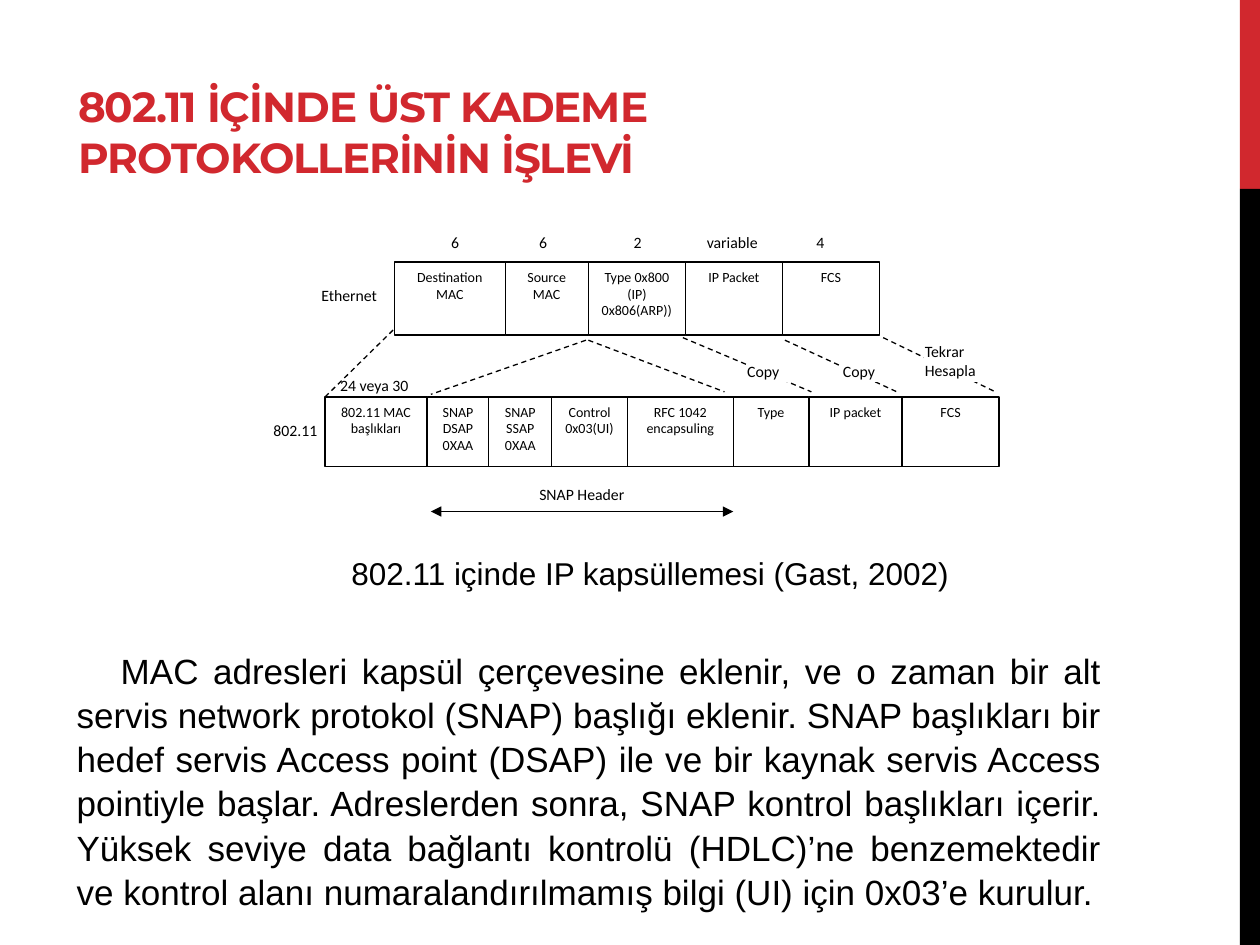
from itertools import pairwise

from lxml import etree
from pptx import Presentation
from pptx.dml.color import RGBColor
from pptx.enum import dml, shapes, text
from pptx.oxml import ns
from pptx.util import Inches, Pt

RED, BLACK, WHITE = "D1282E", "000000", "FFFFFF"

ETHERNET_FIELDS = ["Destination MAC", "Source MAC", "Type 0x800 (IP) 0x806(ARP))", "IP Packet", "FCS"]
ETHERNET_EDGES = [3.13, 4.01, 4.67, 5.44, 6.21, 6.98]
WIFI_FIELDS = ["802.11 MAC başlıkları", "SNAP DSAP 0XAA", "SNAP SSAP 0XAA", "Control 0x03(UI)",
               "RFC 1042 encapsuling", "Type", "IP packet", "FCS"]
WIFI_EDGES = [2.58, 3.39, 3.88, 4.38, 4.98, 5.82, 6.42, 7.16, 7.93]
FIELD_SIZES = [("6", 3.58, 0.1), ("6", 4.28, 0.1), ("2", 5.03, 0.1), ("variable", 5.61, 0.47), ("4", 6.48, 0.1)]
MAPPINGS = [
    (3.12, 2.62, 2.58, 3.15),
    (4.65, 2.7, 3.42, 3.13),
    (4.67, 2.7, 5.75, 3.11),
    (5.42, 2.68, 6.44, 3.11),
    (6.23, 2.7, 7.14, 3.12),
    (7.01, 2.68, 7.9, 3.11),
]
EXPLANATION = (
    "MAC adresleri kapsül çerçevesine eklenir, ve o zaman bir alt servis network protokol (SNAP) "
    "başlığı eklenir. SNAP başlıkları bir hedef servis Access point (DSAP) ile ve bir kaynak servis "
    "Access pointiyle başlar. Adreslerden sonra, SNAP kontrol başlıkları içerir. Yüksek seviye data "
    "bağlantı kontrolü (HDLC)’ne benzemektedir ve kontrol alanı numaralandırılmamış bilgi (UI) için "
    "0x03’e kurulur."
)


def color(value):
    return RGBColor.from_string(value)


def write(frame, words, size, font, ink=BLACK, align=text.PP_ALIGN.LEFT):
    frame.word_wrap = True
    paragraph = frame.paragraphs[0]
    paragraph.alignment = align
    run = paragraph.add_run()
    run.text = words
    run.font.size = Pt(size)
    run.font.name = font
    run.font.color.rgb = color(ink)
    return paragraph


def add_rect(slide, left, top, width, height, fill, outline=None):
    rect = slide.shapes.add_shape(
        shapes.MSO_SHAPE.RECTANGLE, Inches(left), Inches(top), Inches(width), Inches(height))
    rect.shadow.inherit = False
    rect.fill.solid()
    rect.fill.fore_color.rgb = color(fill)
    if outline:
        rect.line.color.rgb = color(outline)
        rect.line.width = Pt(0.75)
    else:
        rect.line.fill.background()
    return rect


def add_frame_row(slide, fields, edges, top, height):
    for field, (left, right) in zip(fields, pairwise(edges)):
        cell = add_rect(slide, left, top, right - left, height, WHITE, BLACK).text_frame
        cell.vertical_anchor = text.MSO_ANCHOR.TOP
        write(cell, field, 8, "Calibri", align=text.PP_ALIGN.CENTER)


def add_label(slide, words, left, top, width, height=0.17):
    label = add_rect(slide, left, top, width, height, WHITE, WHITE).text_frame
    label.margin_left = label.margin_right = label.margin_top = label.margin_bottom = 0
    label.vertical_anchor = text.MSO_ANCHOR.MIDDLE
    write(label, words, 9, "Calibri")


def add_line(slide, x1, y1, x2, y2):
    line = slide.shapes.add_connector(
        shapes.MSO_CONNECTOR.STRAIGHT, Inches(x1), Inches(y1), Inches(x2), Inches(y2))
    line.line.color.rgb = color(BLACK)
    line.line.width = Pt(0.75)
    etree.SubElement(line._element.spPr, ns.qn("a:effectLst"))
    return line


def add_mapping(slide, ends):
    add_line(slide, *ends).line.dash_style = dml.MSO_LINE.DASH


def add_span_arrow(slide, left, right, y):
    outline = add_line(slide, left, y, right, y).line._get_or_add_ln()
    for end in ("a:headEnd", "a:tailEnd"):
        etree.SubElement(outline, ns.qn(end), type="triangle")


def add_text(slide, words, left, top, width, height, size, align=text.PP_ALIGN.LEFT):
    box = slide.shapes.add_textbox(Inches(left), Inches(top), Inches(width), Inches(height))
    return write(box.text_frame, words, size, "Arial", align=align)


def set_title(slide, words):
    title = slide.shapes.title
    title.left, title.top = Inches(0.52), Inches(0.42)
    title.width, title.height = Inches(5.6), Inches(1.07)
    title.text_frame.vertical_anchor = text.MSO_ANCHOR.BOTTOM
    title.text_frame.auto_size = text.MSO_AUTO_SIZE.NONE
    run = write(title.text_frame, words, 24, "Montserrat", RED).runs[0]
    run.font.bold = True
    run._r.get_or_add_rPr().set("spc", "-60")


def add_diagram(slide):
    add_frame_row(slide, ETHERNET_FIELDS, ETHERNET_EDGES, 2.08, 0.58)
    add_frame_row(slide, WIFI_FIELDS, WIFI_EDGES, 3.15, 0.55)
    add_label(slide, "24 veya 30", 2.7, 2.97, 0.62)
    add_label(slide, "802.11", 2.17, 3.33, 0.38)
    add_label(slide, "Ethernet", 2.55, 2.26, 0.5)
    for size, left, width in FIELD_SIZES:
        add_label(slide, size, left, 1.84, width)
    for ends in MAPPINGS:
        add_mapping(slide, ends)
    add_span_arrow(slide, 3.42, 5.82, 4.06)
    add_label(slide, "SNAP Header", 4.28, 3.84, 0.75)
    for left in (5.93, 6.69):
        add_label(slide, "Copy", left, 2.86, 0.38)
    add_label(slide, "Tekrar Hesapla", 7.34, 2.7, 0.48, 0.33)


def main():
    deck = Presentation()
    deck.slide_width, deck.slide_height = Inches(10), Inches(7.5)
    slide = deck.slides.add_slide(deck.slide_layouts[5])
    add_rect(slide, 9.84, 0, 0.16, 1.5, RED)
    add_rect(slide, 9.84, 1.5, 0.16, 6, BLACK)
    set_title(slide, "802.11 İÇİNDE ÜST KADEME PROTOKOLLERİNİN İŞLEVİ")
    explanation = add_text(slide, EXPLANATION, 0.51, 5.09, 8.33, 2.2, 20, text.PP_ALIGN.JUSTIFY)
    explanation.line_spacing = 1.05
    explanation.space_before = Pt(4)
    explanation.space_after = Pt(6)
    explanation._p.get_or_add_pPr().set("indent", str(Inches(0.35)))
    add_diagram(slide)
    add_text(slide, "802.11 içinde IP kapsüllemesi (Gast, 2002)", 2.69, 4.35, 5.04, 0.4, 18)
    deck.save("out.pptx")


if __name__ == "__main__":
    main()
